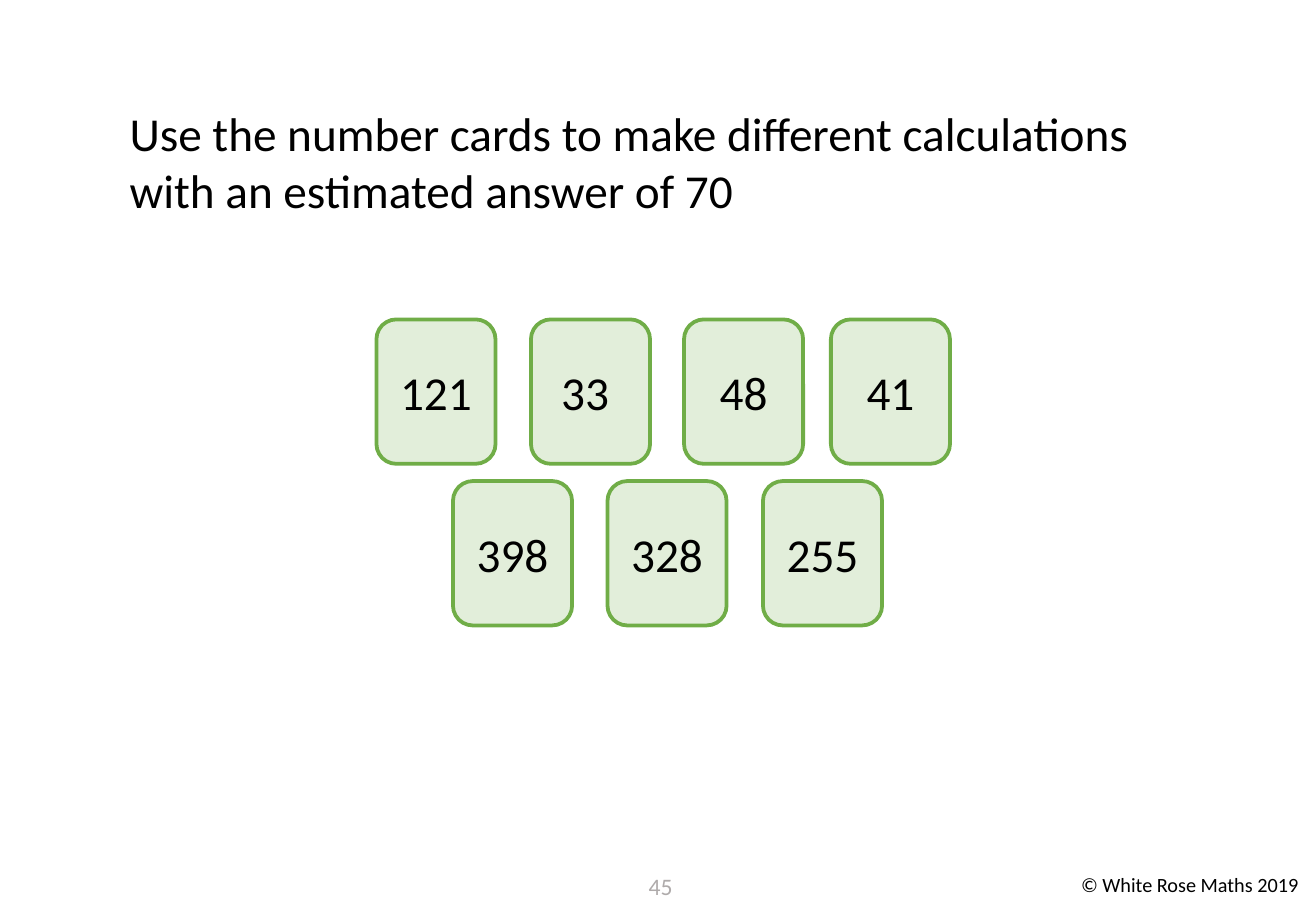
"""Build the number cards estimation slide."""
from lxml.etree import SubElement
from pptx import Presentation
from pptx.dml.color import RGBColor
from pptx.enum.shapes import MSO_SHAPE
from pptx.enum.text import MSO_ANCHOR, PP_ALIGN
from pptx.oxml.ns import qn
from pptx.util import Cm, Pt


def color(hex_value):
    return RGBColor.from_string(hex_value)


def write(shape, text, size, hex_value, align):
    shape.text_frame.word_wrap = True
    paragraph = shape.text_frame.paragraphs[0]
    paragraph.text = text
    paragraph.alignment = align
    paragraph.font.name = "Calibri"
    paragraph.font.size = Pt(size)
    paragraph.font.color.rgb = color(hex_value)


presentation = Presentation()
presentation.slide_width = Cm(27.51)
presentation.slide_height = Cm(19.05)
slide = presentation.slides.add_slide(presentation.slide_layouts[6])

labels = [
    (22.35, 18.11, 5.16, 0.76, "© White Rose Maths 2019", 12, "000000", PP_ALIGN.LEFT),
    (13.16, 18.11, 1.3, 1.02, "45", 14, "AFABAB", PP_ALIGN.CENTER),
    (2.46, 2.06, 22.38, 2.64,
     "Use the number cards to make different calculations with an estimated answer of 70",
     28, "000000", PP_ALIGN.LEFT),
]
for left, top, width, height, text, size, hex_value, align in labels:
    label = slide.shapes.add_textbox(Cm(left), Cm(top), Cm(width), Cm(height))
    write(label, text, size, hex_value, align)

card_rows = [
    (6.68, [(7.87, "121"), (11.1, "33 "), (14.3, "48"), (17.37, "41")]),
    (10.06, [(9.47, "398"), (12.7, "328"), (15.95, "255")]),
]
for top, cards in card_rows:
    for left, number in cards:
        card = slide.shapes.add_shape(
            MSO_SHAPE.ROUNDED_RECTANGLE, Cm(left), Cm(top), Cm(2.49), Cm(3.02))
        card.shadow.inherit = False
        card.fill.solid()
        card.fill.fore_color.rgb = color("70AD47")
        fill_color = card.fill._xPr.find(qn("a:solidFill")).find(qn("a:srgbClr"))
        SubElement(fill_color, qn("a:alpha"), val="20000")
        card.line.color.rgb = color("70AD47")
        card.line.width = Pt(2.25)
        card.text_frame.vertical_anchor = MSO_ANCHOR.MIDDLE
        write(card, number, 28, "000000", PP_ALIGN.CENTER)

presentation.save("out.pptx")
